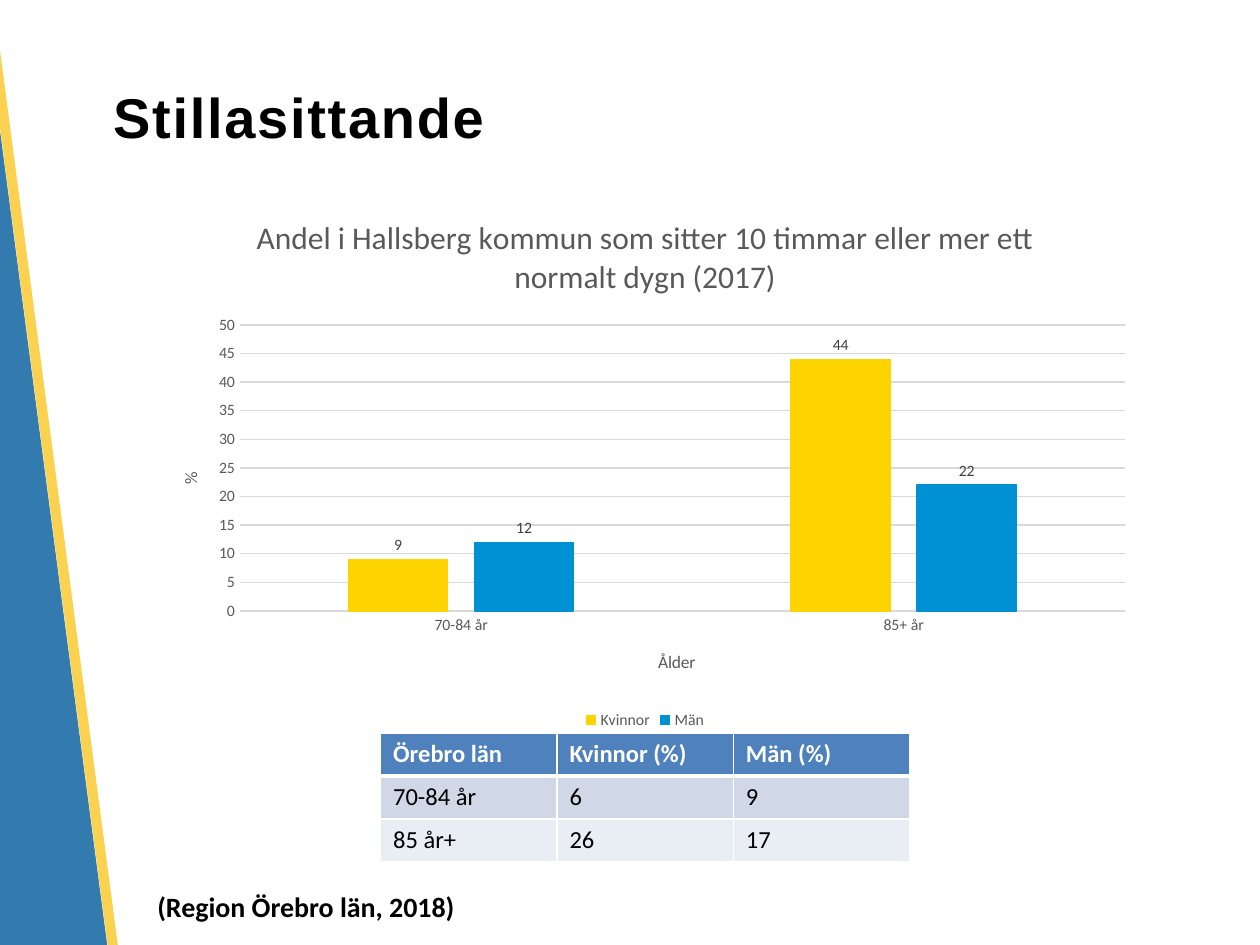
from lxml.etree import SubElement
from pptx import Presentation
from pptx.chart.data import CategoryChartData
from pptx.dml.color import RGBColor
from pptx.enum.chart import XL_CHART_TYPE, XL_LABEL_POSITION, XL_LEGEND_POSITION, XL_TICK_MARK
from pptx.enum.shapes import MSO_SHAPE
from pptx.enum.text import MSO_ANCHOR
from pptx.oxml import parse_xml
from pptx.oxml.ns import nsdecls, qn
from pptx.util import Inches, Pt

BLACK = RGBColor(0x00, 0x00, 0x00)
WHITE = RGBColor(0xFF, 0xFF, 0xFF)
GREY = RGBColor(0x59, 0x59, 0x59)
LABEL_GREY = RGBColor(0x40, 0x40, 0x40)
GRID_GREY = RGBColor(0xD9, 0xD9, 0xD9)
HEADER_BLUE = RGBColor(0x4F, 0x81, 0xBD)
ROW_FILLS = [RGBColor(0xD0, 0xD8, 0xE8), RGBColor(0xE9, 0xED, 0xF4)]

# Content
TITLE = "Stillasittande"
SOURCE = "(Region Örebro län, 2018)"
CHART_TITLE = "Andel i Hallsberg kommun som sitter 10 timmar eller mer ett normalt dygn (2017)"
AGES = ["70-84 år", "85+ år"]
SERIES = [
    ("Kvinnor", (9, 44), RGBColor(0xFD, 0xD4, 0x00)),
    ("Män", (12, 22), RGBColor(0x00, 0x90, 0xD4)),
]
TABLE = [
    ("Örebro län", "Kvinnor (%)", "Män (%)"),
    ("70-84 år", "6", "9"),
    ("85 år+", "26", "17"),
]
# Slanted bands: left, top, width, height, colour, opacity in percent
BANDS = [
    (-0.52, -1.64, 0.91, 11.33, RGBColor(0x00, 0x5B, 0x9C), 80),
    (0.38, -1.77, 0.08, 11.32, RGBColor(0xFA, 0xC8, 0x28), 81),
]
BAND_ANGLE = 352.5
COLUMN_WIDTH, ROW_HEIGHT = 1.4, 0.34


def write(frame, text, size, color=BLACK, bold=False, font="Calibri", spacing=None):
    """Fill a text frame with one formatted run."""
    span = frame.paragraphs[0].add_run()
    span.text = text
    style(span.font, size, color, bold, font)
    if spacing is not None:
        span.font._element.set("spc", str(spacing))


def style(font, size, color, bold=False, name="Calibri"):
    font.size, font.bold, font.name = Pt(size), bold, name
    font.color.rgb = color


def add_box(slide, place, text, anchor=MSO_ANCHOR.TOP, **form):
    box = slide.shapes.add_textbox(*map(Inches, place))
    box.text_frame.word_wrap = True
    box.text_frame.vertical_anchor = anchor
    write(box.text_frame, text, **form)


def add_band(slide, left, top, width, height, color, opacity):
    band = slide.shapes.add_shape(
        MSO_SHAPE.RECTANGLE, *map(Inches, (left, top, width, height)))
    band.rotation = BAND_ANGLE
    band.shadow.inherit = False
    band.line.fill.background()
    band.fill.solid()
    band.fill.fore_color.rgb = color
    tone = band.fill._xPr.find(".//" + qn("a:srgbClr"))
    SubElement(tone, qn("a:alpha"), val=str(opacity * 1000))


def set_layout(part, **shares):
    """Place a chart part by shares of the chart's size."""
    for old in part.findall(qn("c:layout")):
        part.remove(old)
    modes = {"xMode": "edge", "yMode": "edge"}
    if "w" in shares:
        modes = {"layoutTarget": "inner", **modes}
    rules = "".join(f'<c:{key} val="{value}"/>' for key, value in {**modes, **shares}.items())
    layout = parse_xml(
        f'<c:layout {nsdecls("c")}><c:manualLayout>{rules}</c:manualLayout></c:layout>')
    part.insert(1 if part.find(qn("c:tx")) is not None else 0, layout)


def style_axis(axis, title, x, y):
    write(axis.axis_title.text_frame, title, size=10, color=GREY)
    set_layout(axis.axis_title._element, x=x, y=y)
    axis.major_tick_mark = axis.minor_tick_mark = XL_TICK_MARK.NONE
    style(axis.tick_labels.font, 9, GREY)


def add_column_chart(slide):
    data = CategoryChartData()
    data.categories = AGES
    for name, values, _ in SERIES:
        data.add_series(name, values)
    chart = slide.shapes.add_chart(
        XL_CHART_TYPE.COLUMN_CLUSTERED, *map(Inches, (1.16, 1.53, 7.92, 4.3)), data).chart
    style(chart.font, 10, BLACK)
    write(chart.chart_title.text_frame, CHART_TITLE, size=18, color=GREY)
    chart.chart_title.include_in_layout = False
    chart.has_legend = True
    chart.legend.position = XL_LEGEND_POSITION.BOTTOM
    chart.legend.include_in_layout = False
    style(chart.legend.font, 9, GREY)

    # Axes
    ages, share = chart.category_axis, chart.value_axis
    style_axis(ages, "Ålder", x=0.51, y=0.84)
    ages.format.line.color.rgb = GRID_GREY
    ages.format.line.width = Pt(0.75)
    style_axis(share, "%", x=0.03, y=0.51)
    turned = share.axis_title.text_frame._txBody.find(qn("a:bodyPr"))
    turned.set("rot", "-5400000")
    turned.set("vert", "horz")
    share.minimum_scale, share.maximum_scale, share.major_unit = 0, 50, 5
    share.format.line.fill.background()
    share.major_gridlines.format.line.color.rgb = GRID_GREY
    share.major_gridlines.format.line.width = Pt(0.75)

    # Columns and their values
    plot = chart.plots[0]
    plot.gap_width, plot.overlap, plot.vary_by_categories = 219, -27, False
    for series, (_, _, color) in zip(plot.series, SERIES):
        series.format.fill.solid()
        series.format.fill.fore_color.rgb = color
        series.format.line.color.rgb = color
        series.format.line.width = Pt(0.75)
        labels = series.data_labels
        labels.show_value = True
        labels.position = XL_LABEL_POSITION.OUTSIDE_END
        style(labels.font, 9, LABEL_GREY)
    set_layout(chart._chartSpace.chart.plotArea, x=0.094, y=0.244, w=0.887, h=0.528)


def set_borders(cell, header_side):
    """White cell borders, thick between the header and the body."""
    for side in ("L", "R", "T", "B"):
        width = Pt(3 if side == header_side else 1)
        cell._tc.get_or_add_tcPr().append(parse_xml(
            f'<a:ln{side} {nsdecls("a")} w="{width}"><a:solidFill>'
            f'<a:srgbClr val="{WHITE}"/></a:solidFill></a:ln{side}>'))


def add_region_table(slide):
    rows, columns = len(TABLE), len(TABLE[0])
    table = slide.shapes.add_table(rows, columns, *map(Inches, (
        3.02, 5.82, columns * COLUMN_WIDTH, rows * ROW_HEIGHT))).table
    for column in table.columns:
        column.width = Inches(COLUMN_WIDTH)
    for number, texts in enumerate(TABLE):
        header = number == 0
        table.rows[number].height = Inches(ROW_HEIGHT)
        for cell, text in zip(table.rows[number].cells, texts):
            set_borders(cell, {0: "B", 1: "T"}.get(number))
            cell.fill.solid()
            cell.fill.fore_color.rgb = HEADER_BLUE if header else ROW_FILLS[(number - 1) % 2]
            write(cell.text_frame, text, size=14, color=WHITE if header else BLACK, bold=header)


def main():
    deck = Presentation()
    deck.slide_width, deck.slide_height = Inches(10), Inches(7.5)
    slide = deck.slides.add_slide(deck.slide_layouts[6])
    for band in BANDS:
        add_band(slide, *band)
    add_box(slide, (0.8, 0.3, 8.65, 1.25), TITLE, MSO_ANCHOR.MIDDLE,
            size=32, bold=True, font="Arial", spacing=100)
    add_region_table(slide)
    add_box(slide, (1.15, 7.01, 2.72, 0.37), SOURCE, size=16, bold=True)
    add_column_chart(slide)
    deck.save("out.pptx")


if __name__ == "__main__":
    main()
